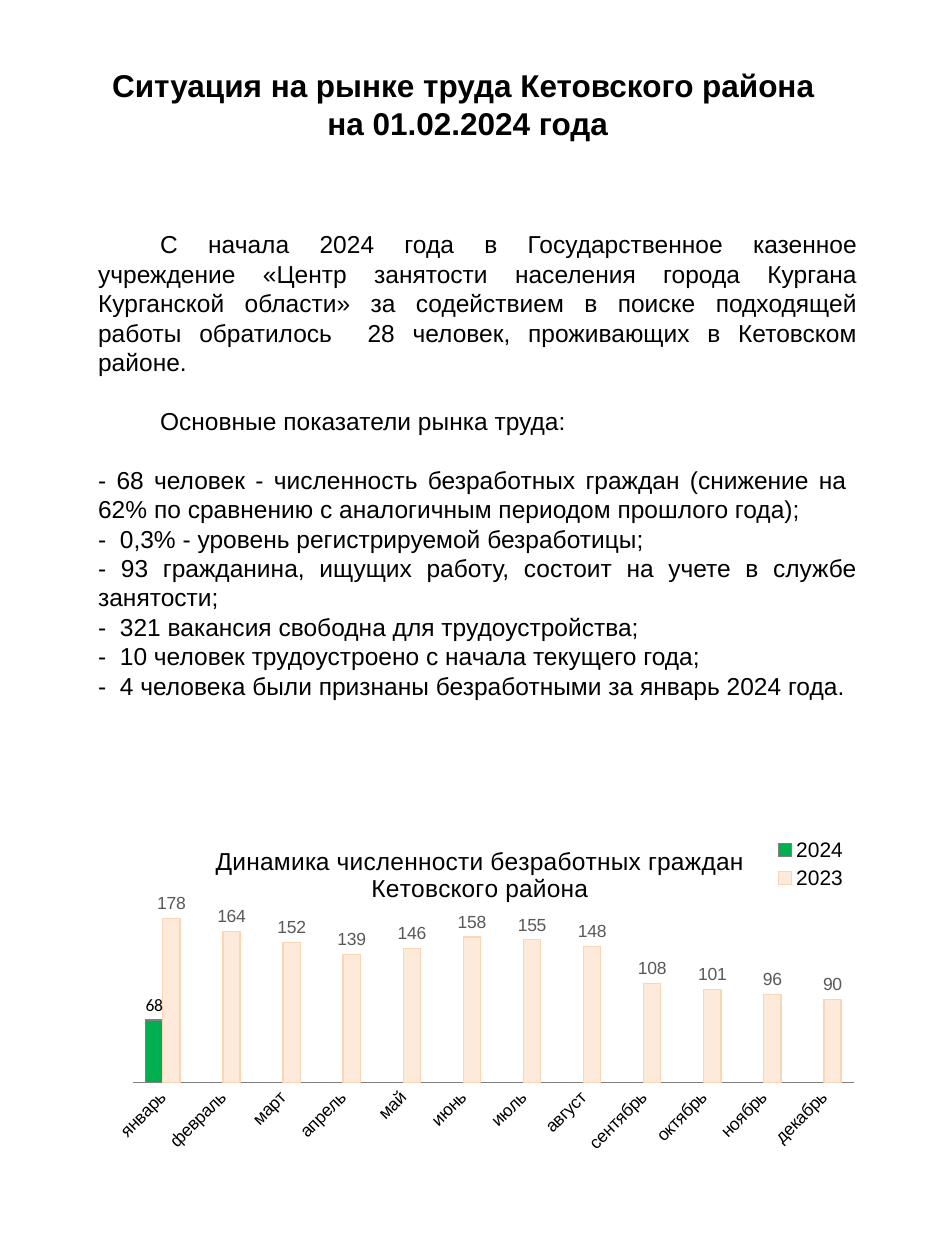
from pptx import Presentation
from pptx.util import Pt
from pptx.dml.color import RGBColor
from pptx.chart.data import CategoryChartData
from pptx.enum import chart as ch, text as tx
from pptx.oxml import parse_xml
from pptx.oxml.ns import nsdecls

# Content
HEAD = "Ситуация на рынке труда Кетовского района \vна 01.02.2024 года"
INTRO = [
    "С начала 2024 года в Государственное казенное учреждение «Центр занятости "
    "населения города Кургана Курганской области» за содействием в поиске "
    "подходящей работы обратилось  28 человек, проживающих в Кетовском районе.",
    "Основные показатели рынка труда:",
]
FACTS = [
    "- 68 человек - численность безработных граждан (снижение на "
    "\v62% по сравнению с аналогичным периодом прошлого года);",
    "-  0,3% - уровень регистрируемой безработицы;",
    "- 93 гражданина, ищущих работу, состоит на учете в службе занятости;",
    "-  321 вакансия свободна для трудоустройства;",
    "-  10 человек трудоустроено с начала текущего года;",
    "-  4 человека были признаны безработными за январь 2024 года.",
]
TITLE = "Динамика численности безработных граждан Кетовского района"
MONTHS = ["январь", "февраль", "март", "апрель", "май", "июнь", "июль",
          "август", "сентябрь", "октябрь", "ноябрь", "декабрь"]
SERIES = [  # name, values, fill, line, label colour, label font
    ("2024", [68] + [None] * 11, "green", "grey", "black", "Calibri"),
    ("2023", [178, 164, 152, 139, 146, 158, 155, 148, 108, 101, 96, 90],
     "cream", "peach", "dark", "Arial"),
]
COLORS = {"black": "000000", "green": "00B050", "grey": "808080",
          "cream": "FDEADA", "peach": "FCD5B5", "dark": "595959"}
LEAD = 1.2  # line height over font size


def color(name):
    return RGBColor.from_string(COLORS[name])


def style(font, size, face="Arial", tint="black", bold=False):
    font.size, font.name, font.bold = Pt(size), face, bold
    font.color.rgb = color(tint)


def add_text(slide, box, lines, size, align, bold=False):
    frame = slide.shapes.add_textbox(*map(Pt, box)).text_frame
    frame.word_wrap = True
    frame.vertical_anchor = tx.MSO_ANCHOR.MIDDLE
    for i, line in enumerate(lines):
        par = frame.paragraphs[0] if i == 0 else frame.add_paragraph()
        par.text, par.alignment = line, align
        par.line_spacing = Pt(size * LEAD)
        style(par.font, size, bold=bold)
    return frame


def place(part, x, y, w=None, h=None):
    """Set a manual layout, in shares of the chart area."""
    inner = w is not None and part.tag.endswith("plotArea")
    tags = '<c:layoutTarget val="inner"/>' if inner else ""
    tags += '<c:xMode val="edge"/><c:yMode val="edge"/>'
    for key, val in zip("xywh", (x, y, w, h)):
        if val is not None:
            tags += f'<c:{key} val="{val}"/>'
    node = parse_xml(f'<c:layout {nsdecls("c")}><c:manualLayout>{tags}'
                     '</c:manualLayout></c:layout>')
    for old in part.findall(node.tag):
        part.remove(old)
    names = [kid.tag.split("}")[1] for kid in part]
    spot = 0
    for i, name in enumerate(names):
        if name in ("tx", "legendPos"):
            spot = i + 1
    part.insert(spot, node)


def add_chart(slide, box):
    data = CategoryChartData()
    data.categories = MONTHS
    for name, vals, *_ in SERIES:
        data.add_series(name, vals)
    chart = slide.shapes.add_chart(
        ch.XL_CHART_TYPE.COLUMN_CLUSTERED, *map(Pt, box), data).chart
    style(chart.font, 18, "Calibri")

    # Title and legend
    chart.has_title = True
    frame = chart.chart_title.text_frame
    frame.text = TITLE
    style(frame.paragraphs[0].font, 14)
    chart.chart_title.include_in_layout = False
    place(chart.chart_title._element, 0.16, 0.06)
    chart.has_legend = True
    legend = chart.legend
    legend.position = ch.XL_LEGEND_POSITION.RIGHT
    legend.include_in_layout = False
    style(legend.font, 12)
    place(legend._element, 0.87, 0.04, 0.11, 0.17)

    # Axes
    axis = chart.category_axis
    axis.major_tick_mark = ch.XL_TICK_MARK.NONE
    axis.format.line.color.rgb = color("grey")
    axis.format.line.width = Pt(0.75)
    style(axis.tick_labels.font, 10)
    axis._element.txPr.bodyPr.set("rot", "-2700000")
    scale = chart.value_axis
    scale.minimum_scale, scale.maximum_scale = 0, 200
    scale.has_major_gridlines = scale.visible = False

    # Columns and their labels
    plot = chart.plots[0]
    plot.gap_width, plot.overlap, plot.vary_by_categories = 150, 0, False
    for ser, (_, _, fill, line, tint, face) in zip(plot.series, SERIES):
        ser.format.fill.solid()
        ser.format.fill.fore_color.rgb = color(fill)
        ser.format.line.color.rgb = color(line)
        ser.format.line.width = Pt(0.75)
        labels = ser.data_labels
        labels.show_value = True
        labels.position = ch.XL_LABEL_POSITION.OUTSIDE_END
        style(labels.font, 10, face, tint)
    place(chart._chartSpace.chart.plotArea, 0.06, 0.22, 0.92, 0.51)


def main():
    prs = Presentation()
    prs.slide_width, prs.slide_height = Pt(540), Pt(720)
    slide = prs.slides.add_slide(prs.slide_layouts[6])

    # Heading
    add_text(slide, (37.5, 34, 459.5, 51), [HEAD], 18,
             tx.PP_ALIGN.CENTER, bold=True)

    # Body: a line of space before the second lead-in and the list
    size = 14
    frame = add_text(slide, (49, 126, 448, 296), INTRO + FACTS, size,
                     tx.PP_ALIGN.JUSTIFY)
    frame.margin_bottom = Pt(3.6 + size * LEAD)
    for par in frame.paragraphs[:len(INTRO)]:
        par._p.get_or_add_pPr().set("indent", str(Pt(35.4)))
    for par in frame.paragraphs[1:len(INTRO) + 1]:
        par.space_before = Pt(size * LEAD)

    add_chart(slide, (49, 468, 448, 206.5))
    prs.save("out.pptx")


if __name__ == "__main__":
    main()
